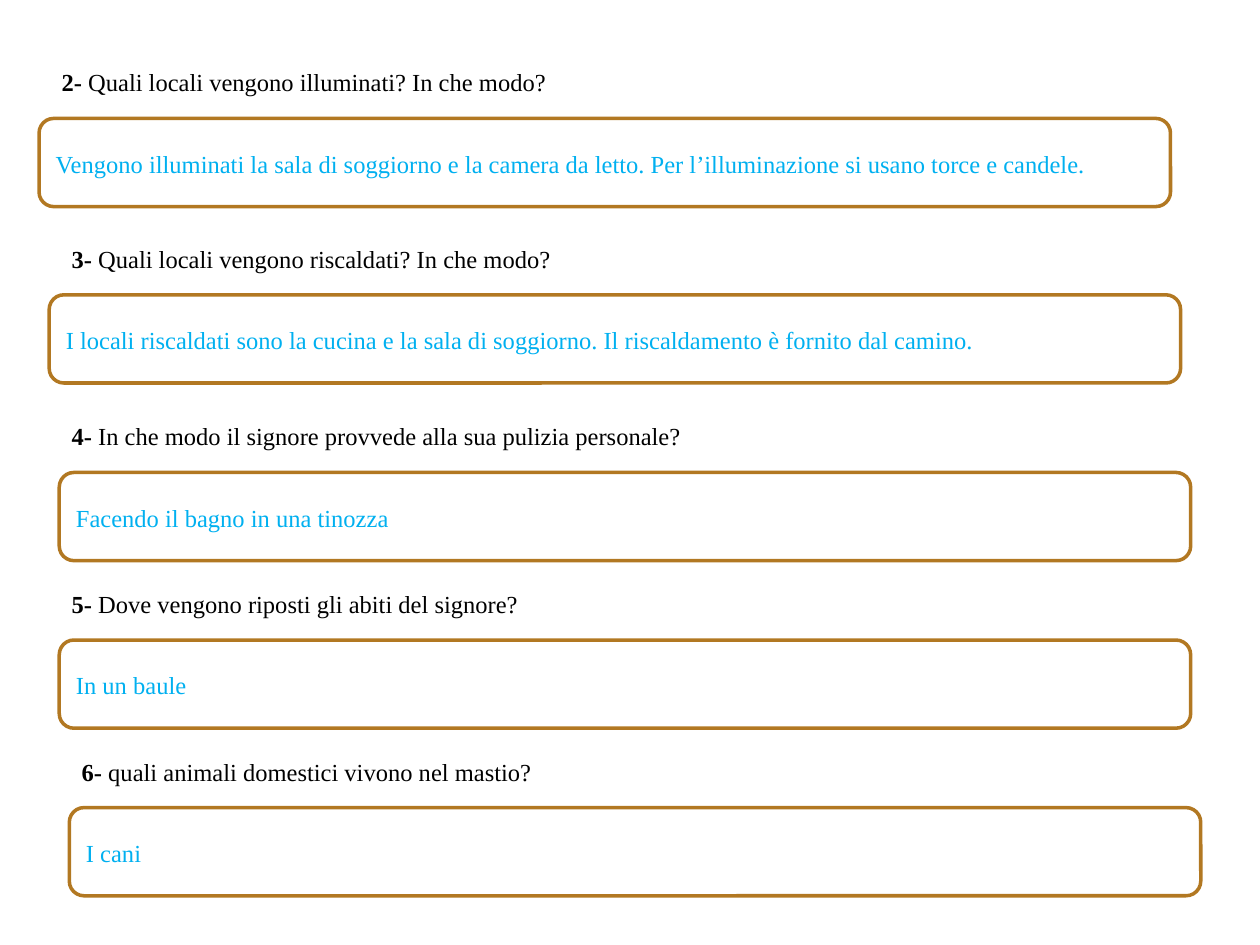
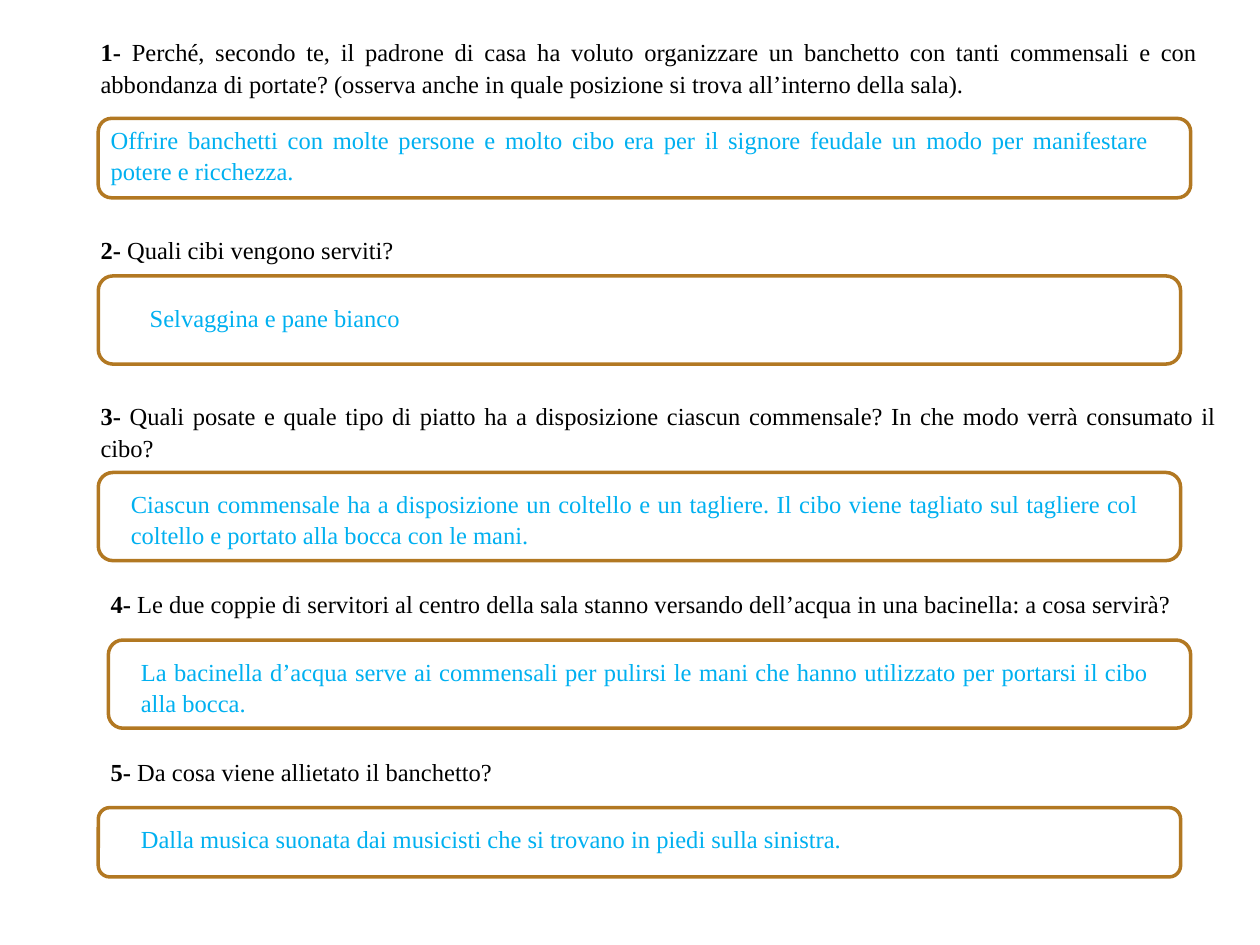
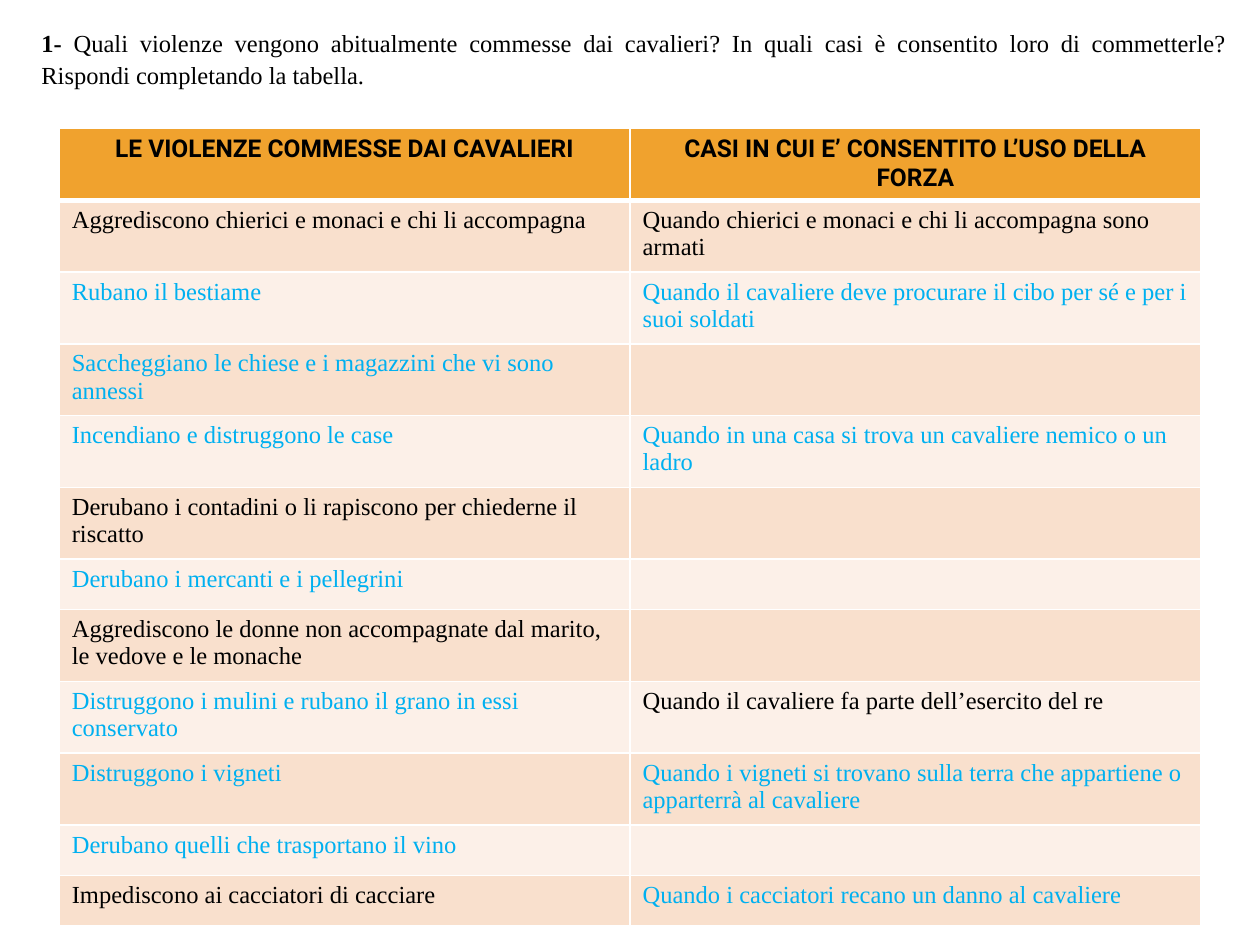
from dataclasses import dataclass

from lxml import etree
from pptx import Presentation
from pptx.dml.color import RGBColor
from pptx.enum.shapes import MSO_SHAPE
from pptx.enum.text import MSO_ANCHOR, PP_ALIGN
from pptx.oxml.ns import qn
from pptx.util import Inches, Pt

ROUND = MSO_SHAPE.ROUNDED_RECTANGLE
MIDDLE = MSO_ANCHOR.MIDDLE
TOP = MSO_ANCHOR.TOP
JUSTIFY = PP_ALIGN.JUSTIFY
CENTER = PP_ALIGN.CENTER
LEFT = PP_ALIGN.LEFT


@dataclass(frozen=True)
class Theme:
    ink: str = "000000"
    answer: str = "00B0F0"
    paper: str = "FFFFFF"
    frame: str = "B27822"
    head: str = "F0A22E"
    bands: tuple = ("F9E0CD", "FCF0E8")
    body: str = "Times New Roman"
    label: str = "Roboto"
    size: int = 14
    stroke: int = 2
    leading: float = 1.07


THEME = Theme()

HOME = [
    ((0.39, 0.47, 9.61, 0.34), "2- ", "Quali locali vengono illuminati? In che modo?",
     (0.31, 0.94),
     "Vengono illuminati la sala di soggiorno e la camera da letto. "
     "Per l’illuminazione si usano torce e candele."),
    ((0.47, 1.87, 7.5, 0.34), "3- ", "Quali locali vengono riscaldati? In che modo?",
     (0.39, 2.34),
     "I locali riscaldati sono la cucina e la sala di soggiorno. "
     "Il riscaldamento è fornito dal camino."),
    ((0.47, 3.28, 7.5, 0.34), "4- ",
     "In che modo il signore provvede alla sua pulizia personale?",
     (0.47, 3.75), "Facendo il bagno in una tinozza"),
    ((0.47, 4.61, 7.5, 0.34), "5- ", "Dove vengono riposti gli abiti del signore?",
     (0.47, 5.08), "In un baule"),
    ((0.55, 5.94, 7.5, 0.34), "6- ", "quali animali domestici vivono nel mastio?",
     (0.55, 6.41), "I cani"),
]

FEAST = [
    ((0.7, 0.23, 8.91, 0.57), "1- ",
     "Perché, secondo te, il padrone di casa ha voluto organizzare un banchetto con "
     "tanti commensali e con abbondanza di portate? (osserva anche in quale posizione "
     "si trova all’interno della sala).",
     (0.78, 0.94, 8.67, 0.63), (0.78, 0.94, 8.44, 0.57),
     "Offrire banchetti con molte persone e molto cibo era per il signore feudale "
     "un modo per manifestare potere e ricchezza."),
    ((0.7, 1.8, 9.06, 0.34), "2- ", "Quali cibi vengono serviti?",
     (0.78, 2.19, 8.59, 0.7), (1.09, 2.34, 7.34, 0.34),
     "Selvaggina e pane bianco"),
    ((0.7, 3.12, 9.06, 0.57), "3- ",
     "Quali posate e quale tipo di piatto ha a disposizione ciascun commensale? "
     "In che modo verrà consumato il cibo?",
     (0.78, 3.75, 8.59, 0.7), (0.94, 3.83, 8.2, 0.57),
     "Ciascun commensale ha a disposizione un coltello e un tagliere. Il cibo viene "
     "tagliato sul tagliere col coltello e portato alla bocca con le mani."),
    ((0.78, 4.61, 9.06, 0.34), "4- ",
     "Le due coppie di servitori al centro della sala stanno versando dell’acqua in "
     "una bacinella: a cosa servirà?",
     (0.86, 5.08, 8.59, 0.7), (1.02, 5.16, 8.2, 0.57),
     "La bacinella d’acqua serve ai commensali per pulirsi le mani che hanno "
     "utilizzato per portarsi il cibo alla bocca."),
    ((0.78, 5.94, 9.06, 0.34), "5- ", "Da cosa viene allietato il banchetto?",
     (0.78, 6.41, 8.59, 0.55), (1.02, 6.48, 8.2, 0.34),
     "Dalla musica suonata dai musicisti che si trovano in piedi sulla sinistra."),
]

HEADS = ("LE VIOLENZE COMMESSE DAI CAVALIERI",
         "CASI IN CUI E’ CONSENTITO L’USO DELLA FORZA")
DEEDS = [
    ("Aggrediscono chierici e monaci e chi li accompagna",
     "Quando chierici e monaci e chi li accompagna sono armati"),
    ("Rubano il bestiame",
     "Quando il cavaliere deve procurare il cibo per sé e per i suoi soldati"),
    ("Saccheggiano le chiese e i magazzini che vi sono annessi", ""),
    ("Incendiano e distruggono le case",
     "Quando in una casa si trova un cavaliere nemico o un ladro"),
    ("Derubano i contadini o li rapiscono per chiederne il riscatto", ""),
    ("Derubano i mercanti e i pellegrini", ""),
    ("Aggrediscono le donne non accompagnate dal marito, le vedove e le monache", ""),
    ("Distruggono i mulini e rubano il grano in essi conservato",
     "Quando il cavaliere fa parte dell’esercito del re"),
    ("Distruggono i vigneti",
     "Quando i vigneti si trovano sulla terra che appartiene o apparterrà al cavaliere"),
    ("Derubano quelli che trasportano il vino", ""),
    ("Impediscono ai cacciatori di cacciare",
     "Quando i cacciatori recano un danno al cavaliere"),
]
GIVEN = {(1, 0), (1, 1), (5, 0), (7, 0), (8, 1), (11, 0)}
SHORT = {6, 10, 11}


def rgb(code):
    return RGBColor.from_string(code)


def inches(box):
    return [Inches(side) for side in box]


def style(para, color, align, face=THEME.body, bold=False):
    para.alignment = align
    font = para.font
    font.name = face
    font.size = Pt(THEME.size)
    font.bold = bold
    font.color.rgb = rgb(color)


def write(frame, text, color, anchor, mark=""):
    frame.word_wrap = True
    frame.vertical_anchor = anchor
    para = frame.paragraphs[0]
    style(para, color, JUSTIFY)
    para.line_spacing = THEME.leading
    if mark:
        run = para.add_run()
        run.text = mark
        run.font.bold = True
    para.add_run().text = text


def ask(slide, box, mark, text):
    area = slide.shapes.add_textbox(*inches(box))
    write(area.text_frame, text, THEME.ink, TOP, mark)


def reply(slide, box, text):
    area = slide.shapes.add_textbox(*inches(box))
    write(area.text_frame, text, THEME.answer, MIDDLE)


def card(slide, box):
    shape = slide.shapes.add_shape(ROUND, *inches(box))
    shape.shadow.inherit = False
    shape.fill.solid()
    shape.fill.fore_color.rgb = rgb(THEME.paper)
    shape.line.color.rgb = rgb(THEME.frame)
    shape.line.width = Pt(THEME.stroke)
    return shape


def edge(cell, head):
    props = cell._tc.get_or_add_tcPr()
    for side in ("lnL", "lnR", "lnT", "lnB"):
        width = 3 if head and side == "lnB" else 1
        line = etree.SubElement(props, qn("a:" + side), w=str(Pt(width)))
        fill = etree.SubElement(line, qn("a:solidFill"))
        etree.SubElement(fill, qn("a:srgbClr"), val=THEME.paper)


def grid(slide, box):
    rows = [HEADS] + DEEDS
    table = slide.shapes.add_table(len(rows), len(HEADS), *inches(box)).table
    table.first_row = False
    table.horz_banding = False
    for r, texts in enumerate(rows):
        head = r == 0
        table.rows[r].height = Inches(0.4 if r in SHORT else 0.57)
        for c, text in enumerate(texts):
            cell = table.cell(r, c)
            edge(cell, head)
            cell.fill.solid()
            cell.fill.fore_color.rgb = rgb(THEME.head if head else THEME.bands[(r - 1) % 2])
            cell.text = text
            para = cell.text_frame.paragraphs[0]
            if head:
                style(para, THEME.ink, CENTER, THEME.label, True)
            else:
                style(para, THEME.ink if (r, c) in GIVEN else THEME.answer, LEFT)


def home(slide):
    for box, mark, text, (x, y), answer in HOME:
        ask(slide, box, mark, text)
        shape = card(slide, (x, y, 8.98, 0.7))
        write(shape.text_frame, answer, THEME.answer, MIDDLE)


def feast(slide):
    for box, mark, text, frame, area, answer in FEAST:
        ask(slide, box, mark, text)
        card(slide, frame)
        reply(slide, area, answer)


def knights(slide):
    ask(slide, (0.23, 0.16, 9.61, 0.57), "1- ",
        "Quali violenze vengono abitualmente commesse dai cavalieri? In quali casi è "
        "consentito loro di commetterle? Rispondi completando la tabella.")
    grid(slide, (0.47, 1.02, 9.06, 6.16))


def main():
    deck = Presentation()
    deck.slide_width = Inches(10)
    deck.slide_height = Inches(7.5)
    blank = deck.slide_layouts[6]
    for build in (home, feast, knights):
        build(deck.slides.add_slide(blank))
    deck.save("out.pptx")


if __name__ == "__main__":
    main()
